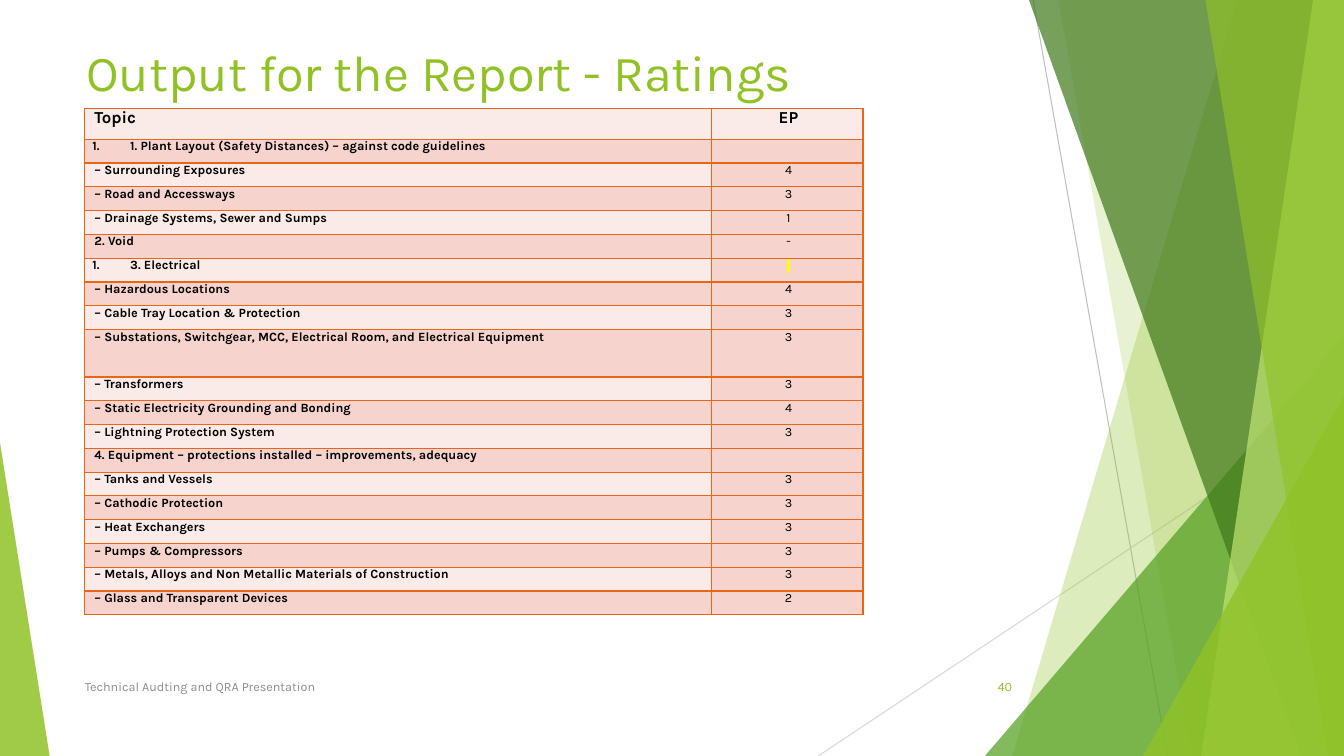
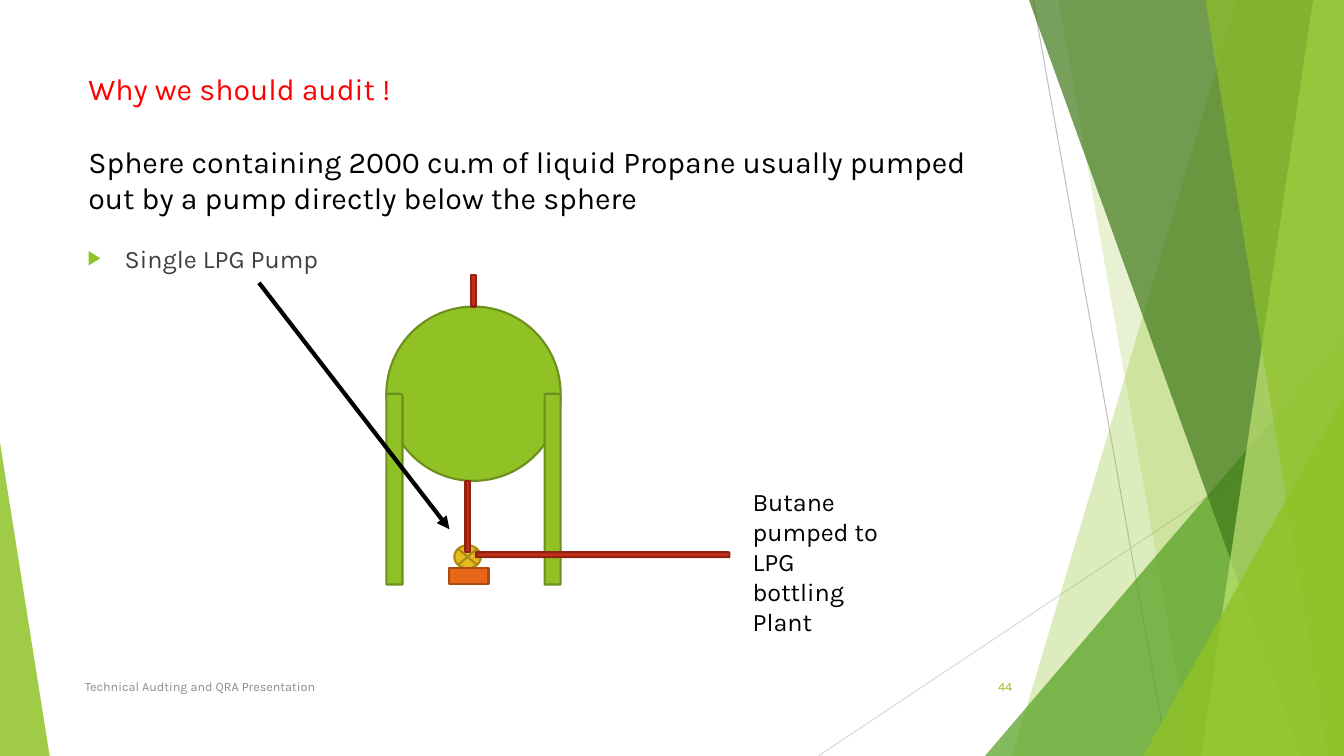
from dataclasses import dataclass
from typing import NamedTuple

from lxml.etree import SubElement
from pptx import Presentation
from pptx.dml.color import RGBColor
from pptx.enum.shapes import MSO_CONNECTOR, MSO_SHAPE as Preset
from pptx.enum.text import MSO_ANCHOR as Anchor, PP_ALIGN as Align
from pptx.oxml.ns import qn
from pptx.util import Pt


class Box(NamedTuple):
    left: float
    top: float
    width: float
    height: float

    def inner(self, left, top, width, height):
        """Return a box whose offset is counted from this box's corner."""
        return Box(self.left + left, self.top + top, width, height)

    def lengths(self):
        return [Pt(value) for value in self]


@dataclass(frozen=True)
class Theme:
    font: str = "Karla"
    green: str = "90C226"
    green_edge: str = "6B901C"
    mid_green: str = "54A021"
    dark_green: str = "3F7819"
    pale_green: str = "C0E474"
    orange: str = "E76618"
    orange_edge: str = "AB4B12"
    gold: str = "E6B91E"
    gold_edge: str = "AA8916"
    pipe_red: str = "C42F1A"
    pipe_edge: str = "912313"
    row_light: str = "FAEAE8"
    row_dark: str = "F6D3CC"
    highlight: str = "FFFF00"
    alert: str = "FF0000"
    black: str = "000000"
    body: str = "404040"
    muted: str = "8C8C8C"
    ray_dark: str = "BFBFBF"
    ray_light: str = "D9D9D9"
    title_size: float = 36
    lead_size: float = 21.6
    body_size: float = 18
    head_size: float = 12
    small_size: float = 9


THEME = Theme()
PAGE = Box(0, 0, 960, 540)
TITLE = Box(54.5, 26, 677, 68)
LEAD = Box(56, 47, 677, 104)
BULLETS = Box(55.5, 170, 677, 305)
RATINGS = Box(60.5, 77.5, 556, 362)
FOOTER = Box(53.5, 476, 676.5, 29)
PLANT = Box(276, 196.5, 245, 221)
DESTINATION = Box(530.5, 343.5, 113, 116.5)

# Colour, opacity in percent, top edge x, bottom edge x; each runs to the right margin
FACETS_BACK = [(THEME.green, 30, 883.5, 723), (THEME.green, 20, 756, 851)]
FACETS_FRONT = [
    (THEME.dark_green, 70, 735, 929.5),
    (THEME.pale_green, 70, 938, 858),
    (THEME.green, 65, 861, 948.5),
]

NUMBERED = "numbered"
RATING_ROWS = [
    ("1. Plant Layout (Safety Distances) – against code guidelines", "", NUMBERED),
    ("– Surrounding Exposures", "4"),
    ("– Road and Accessways", "3"),
    ("– Drainage Systems, Sewer and Sumps", "1"),
    ("2. Void", "-"),
    ("3. Electrical", " ", NUMBERED),
    ("– Hazardous Locations", "4"),
    ("– Cable Tray Location & Protection", "3"),
    ("– Substations, Switchgear, MCC, Electrical Room, and Electrical Equipment", "3"),
    ("– Transformers", "3"),
    ("– Static Electricity Grounding and Bonding", "4"),
    ("– Lightning Protection System", "3"),
    ("4. Equipment – protections installed – improvements, adequacy", ""),
    ("– Tanks and Vessels", "3"),
    ("– Cathodic Protection", "3"),
    ("– Heat Exchangers", "3"),
    ("– Pumps & Compressors", "3"),
    ("– Metals, Alloys and Non Metallic Materials of Construction", "3"),
    ("– Glass and Transparent Devices", "2"),
]
HEAD_HEIGHT, ROW_HEIGHT, TALL_ROW = 22, 17, 9


def rgb(value):
    return RGBColor.from_string(value)


def set_all(target, **values):
    for name, value in values.items():
        setattr(target, name, value)


def paint(shape, fill, edge=None, opacity=100):
    shape.shadow.inherit = False
    shape.fill.solid()
    shape.fill.fore_color.rgb = rgb(fill)
    if opacity < 100:
        color = shape.fill._xPr.find(qn("a:solidFill"))[0]
        SubElement(color, qn("a:alpha"), val=str(opacity * 1000))
    if edge:
        shape.line.color.rgb = rgb(edge)
        shape.line.width = Pt(1.5)
    else:
        shape.line.fill.background()


def add_preset(slide, preset, box, fill, edge=None, opacity=100, apex=None):
    shape = slide.shapes.add_shape(preset, *box.lengths())
    if apex is not None:
        shape.adjustments[0] = apex
    paint(shape, fill, edge, opacity)


def add_line(slide, start, end, color, width, arrow=False):
    line = slide.shapes.add_connector(
        MSO_CONNECTOR.STRAIGHT, *[Pt(value) for value in (*start, *end)])
    line.line.color.rgb = rgb(color)
    line.line.width = Pt(width)
    if arrow:
        SubElement(line.line._get_or_add_ln(), qn("a:tailEnd"), type="triangle")
    SubElement(line._element.spPr, qn("a:effectLst"))


def write(paragraph, text, size, color=THEME.black, bold=False, align=Align.LEFT):
    paragraph.alignment = align
    run = paragraph.add_run()
    run.text = text
    set_all(run.font, name=THEME.font, size=Pt(size), bold=bold)
    run.font.color.rgb = rgb(color)
    return run


def indent(paragraph, margin, first=0):
    properties = paragraph._p.get_or_add_pPr()
    properties.set("marL", str(Pt(margin)))
    properties.set("indent", str(Pt(first)))
    return properties


def add_text(slide, box, text, size, color, align=Align.LEFT, anchor=Anchor.TOP):
    frame = slide.shapes.add_textbox(*box.lengths()).text_frame
    set_all(frame, word_wrap=True, vertical_anchor=anchor)
    write(frame.paragraphs[0], text, size, color, align=align)
    return frame


def add_facet(slide, color, opacity, top_x, bottom_x):
    corners = [(top_x, PAGE.top), (PAGE.width, PAGE.top),
               (PAGE.width, PAGE.height), (bottom_x, PAGE.height)]
    start, *others = [(Pt(x), Pt(y)) for x, y in corners]
    outline = slide.shapes.build_freeform(*start)
    outline.add_line_segments(others, close=True)
    paint(outline.convert_to_shape(), color, opacity=opacity)


def add_corner(slide, width, height, color, opacity, at_right=True):
    """Add a right triangle standing in a lower corner of the page."""
    left = PAGE.width - width if at_right else 0
    add_preset(slide, Preset.ISOSCELES_TRIANGLE,
               Box(left, PAGE.height - height, width, height),
               color, opacity=opacity, apex=int(at_right))


def add_backdrop(slide):
    add_line(slide, (738, 0), (834, PAGE.height), THEME.ray_dark, 0.75)
    add_line(slide, (PAGE.width, 290), (584.5, PAGE.height), THEME.ray_light, 0.75)
    for facet in FACETS_BACK:
        add_facet(slide, *facet)
    add_corner(slide, 256.5, 300, THEME.mid_green, 72)
    for facet in FACETS_FRONT:
        add_facet(slide, *facet)
    add_corner(slide, 143.5, 257, THEME.green, 80)
    add_corner(slide, 35.5, 224, THEME.green, 85, at_right=False)


def add_footer(slide, box, number):
    number_width = 54
    for part, text, color, align in (
        (box.inner(0, 0, 496, box.height),
         "Technical Audting and QRA Presentation", THEME.muted, Align.LEFT),
        (box.inner(box.width - number_width, 0, number_width, box.height),
         str(number), THEME.green, Align.RIGHT),
    ):
        add_text(slide, part, text, THEME.small_size, color, align, Anchor.MIDDLE)


def style_cell(cell, fill):
    set_all(cell, margin_left=Pt(5.5), margin_right=Pt(5.5),
            margin_top=0, margin_bottom=0)
    properties = cell._tc.get_or_add_tcPr()
    for side in ("lnL", "lnR", "lnT", "lnB"):
        border = SubElement(properties, qn(f"a:{side}"), w=str(Pt(1)))
        SubElement(SubElement(border, qn("a:solidFill")),
                   qn("a:srgbClr"), val=THEME.orange)
    cell.fill.solid()
    cell.fill.fore_color.rgb = rgb(fill)


def fill_topic(cell, text, size, numbered=False):
    paragraph = cell.text_frame.paragraphs[0]
    write(paragraph, text, size, bold=True, align=Align.JUSTIFY)
    if numbered:
        paragraph.space_before = Pt(6)
        SubElement(indent(paragraph, 27, -27), qn("a:buAutoNum"), type="arabicPeriod")
    else:
        indent(paragraph, 1.5)


def fill_rating(cell, text, size, bold=False):
    """Write a rating; a lone space shows as a highlighted mark."""
    paragraph = cell.text_frame.paragraphs[0]
    indent(paragraph, 1.5)
    if not text:
        SubElement(paragraph._p, qn("a:endParaRPr"), sz=str(size * 100))
        return
    run = write(paragraph, text, size, bold=bold, align=Align.CENTER)
    if text.isspace():
        mark = run._r.rPr.makeelement(qn("a:highlight"))
        SubElement(mark, qn("a:srgbClr"), val=THEME.highlight)
        run._r.rPr.find(qn("a:solidFill")).addnext(mark)


def add_ratings(slide, box):
    table = slide.shapes.add_table(len(RATING_ROWS) + 1, 2, *box.lengths()).table
    set_all(table, first_row=False, horz_banding=False)
    rating_width = 108
    for column, width in zip(table.columns, (box.width - rating_width, rating_width)):
        column.width = Pt(width)
    for index, (topic, rating, *kind) in enumerate([("Topic", "EP"), *RATING_ROWS]):
        head = index == 0
        size = THEME.head_size if head else THEME.small_size
        lines = 2 if index == TALL_ROW else 1
        table.rows[index].height = Pt(HEAD_HEIGHT if head else ROW_HEIGHT * lines)
        topic_cell, rating_cell = table.rows[index].cells
        style_cell(topic_cell, THEME.row_dark if index % 2 else THEME.row_light)
        style_cell(rating_cell, THEME.row_light if head else THEME.row_dark)
        fill_topic(topic_cell, topic, size, NUMBERED in kind)
        fill_rating(rating_cell, rating, size, bold=head)


def add_lead(slide, box):
    frame = add_text(slide, box, "Why we should audit !", THEME.lead_size, THEME.alert)
    statement = frame.add_paragraph()
    statement.space_before = Pt(26)
    write(statement, "Sphere containing 2000 cu.m of liquid Propane usually pumped "
          "out by a pump directly below the sphere", THEME.lead_size)


def add_bullet(slide, box, text):
    frame = add_text(slide, box, text, THEME.body_size, THEME.body)
    properties = indent(frame.paragraphs[0], 26.5, -26.5)
    SubElement(SubElement(properties, qn("a:buClr")), qn("a:srgbClr"), val=THEME.green)
    SubElement(properties, qn("a:buSzPct"), val="80000")
    SubElement(properties, qn("a:buFont"), typeface="Arial")
    SubElement(properties, qn("a:buChar"), char="▶")


def add_plant(slide, box):
    """Draw the sphere on its legs, with vent, outlet, pump and delivery pipe."""
    sphere, vent, leg, pipe = 124.5, 22.5, 11.5, 3.5
    sphere_bottom, shoulder = vent + sphere, vent + sphere / 2
    base_top, delivery = box.height - 11.5, 198
    green = THEME.green, THEME.green_edge
    red = THEME.pipe_red, THEME.pipe_edge
    parts = [
        (Preset.OVAL, (0, vent, sphere, sphere), green),
        *[(Preset.ROUND_1_RECTANGLE, (x, shoulder, leg, box.height - shoulder), green)
          for x in (0, sphere - leg)],
        (Preset.FLOWCHART_SUMMING_JUNCTION, (48.5, base_top - 16.5, 19, 16.5),
         (THEME.gold, THEME.gold_edge)),
        (Preset.RECTANGLE, (45, base_top, 28, 11.5), (THEME.orange, THEME.orange_edge)),
        (Preset.RECTANGLE, (56.5, sphere_bottom, pipe, delivery - sphere_bottom), red),
        (Preset.ROUND_1_RECTANGLE, (64, delivery, box.width - 64, pipe), red),
        (Preset.RECTANGLE, (60.5, 0, pipe, vent), red),
    ]
    for preset, place, colors in parts:
        add_preset(slide, preset, box.inner(*place), *colors)
    add_line(slide, (box.left - 91, box.top + 5.5), (box.left + 45, box.top + 181.5),
             THEME.black, 3, arrow=True)


def add_page(deck, number):
    slide = deck.slides.add_slide(deck.slide_layouts[6])
    add_backdrop(slide)
    add_footer(slide, FOOTER, number)
    return slide


def build_ratings_slide(deck):
    slide = add_page(deck, 40)
    add_text(slide, TITLE, "Output for the Report - Ratings",
             THEME.title_size, THEME.green)
    add_ratings(slide, RATINGS)


def build_audit_slide(deck):
    slide = add_page(deck, 44)
    add_lead(slide, LEAD)
    add_bullet(slide, BULLETS, "Single LPG Pump")
    add_plant(slide, PLANT)
    add_text(slide, DESTINATION, "Butane pumped to LPG bottling Plant",
             THEME.body_size, THEME.black)


def main():
    deck = Presentation()
    set_all(deck, slide_width=Pt(PAGE.width), slide_height=Pt(PAGE.height))
    build_ratings_slide(deck)
    build_audit_slide(deck)
    deck.save("out.pptx")


if __name__ == "__main__":
    main()
